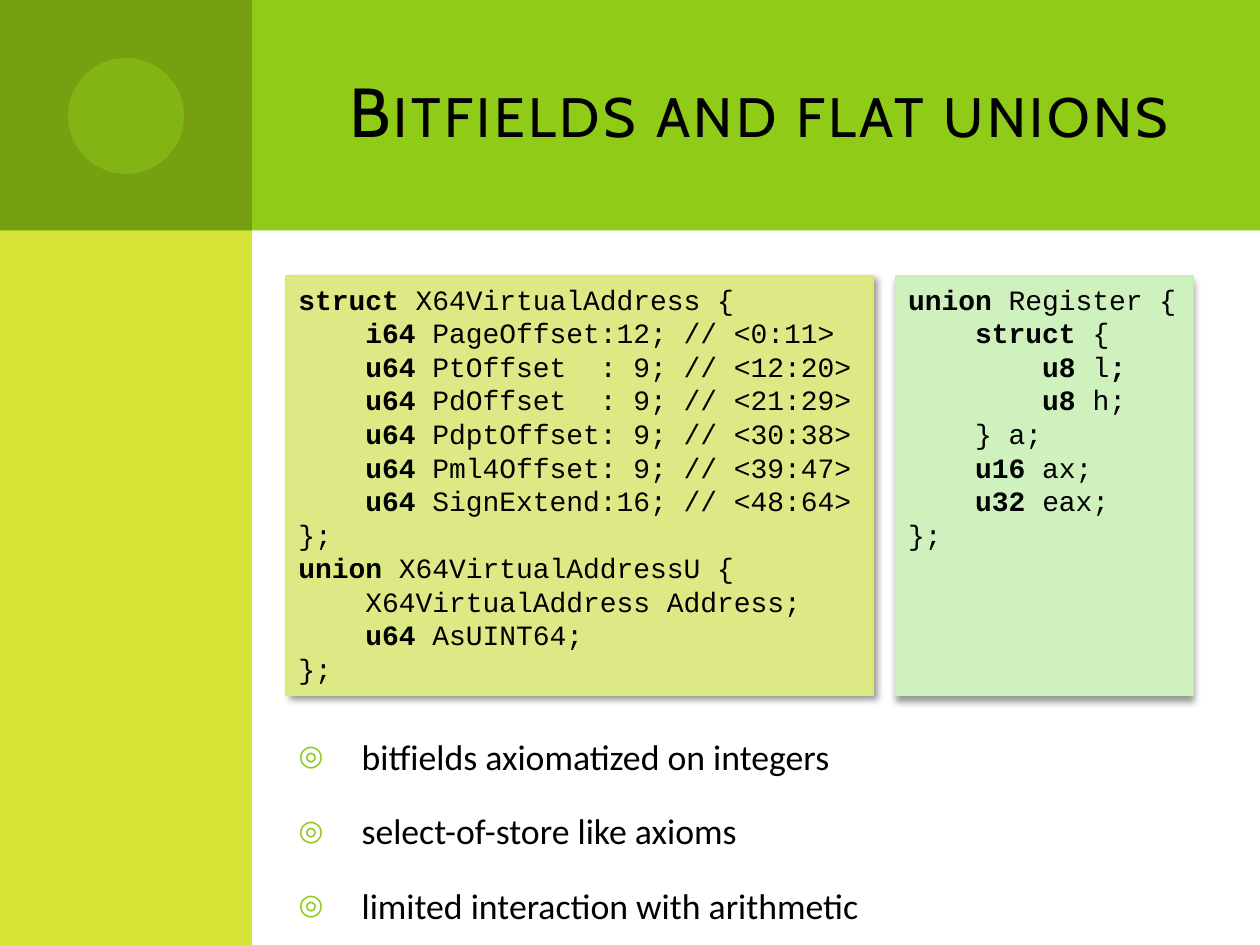
"""Builds a slide on bitfields and flat unions with two code panels and a list."""
from lxml import etree
from pptx import Presentation
from pptx import util as u
from pptx.dml import color
from pptx.enum import shapes, text
from pptx.oxml import ns

COLOURS = {
    "green": "8FCB17", "dark": "769F11", "lime": "D4E336", "ink": "000000",
    "struct": "DDE985", "struct_edge": "DBE964",
    "union": "CFF1BE", "union_edge": "C7F0B2",
}

ADDRESS_CODE = """*struct* X64VirtualAddress {
    *i64 *PageOffset:12; // <0:11>
    *u64 *PtOffset  : 9; // <12:20>
    *u64 *PdOffset  : 9; // <21:29>
    *u64 *PdptOffset: 9; // <30:38>
    *u64 *Pml4Offset: 9; // <39:47>
    *u64 *SignExtend:16; // <48:64>
};
*union* X64VirtualAddressU {
    X64VirtualAddress Address;
    *u64 *AsUINT64;
};"""

REGISTER_CODE = """*union* Register {
*    struct* {
*        u8* l*;*
*        u8 *h;
    } a;
*    u16* ax;
*    u32 *eax;
};"""

POINTS = [
    "bitfields axiomatized on integers",
    "select-of-store like axioms",
    "limited interaction with arithmetic",
]


class Slide:
    """Holds the style and the current slide; areas are percentages of the slide."""

    def __init__(self, deck):
        self.deck = deck
        self.page = deck.slides.add_slide(deck.slide_layouts[1])

    def area(self, left, top, width, height):
        """Turns percentages into lengths."""
        wide, high = self.deck.slide_width, self.deck.slide_height
        return [int(share * side / 100) for share, side in
                ((left, wide), (top, high), (width, wide), (height, high))]

    def rgb(self, name):
        """Looks up a named colour."""
        return color.RGBColor.from_string(COLOURS[name])

    def child(self, parent, tag, **attributes):
        """Appends a drawing element."""
        return etree.SubElement(parent, ns.qn(tag), attributes)

    def span(self, para, words, font, size, bold=False):
        """Adds one formatted run."""
        span = para.add_run()
        span.text = words
        span.font.name, span.font.size, span.font.bold = font, u.Pt(size), bold
        span.font.color.rgb = self.rgb("ink")
        return span

    def block(self, area, fill, kind=shapes.MSO_SHAPE.RECTANGLE, alpha=None):
        """Adds a plain filled shape."""
        box = self.page.shapes.add_shape(kind, *self.area(*area))
        box.shadow.inherit = False
        box.fill.solid()
        box.fill.fore_color.rgb = self.rgb(fill)
        box.line.fill.background()
        if alpha:
            tint = box.fill._xPr.find(".//" + ns.qn("a:srgbClr"))
            self.child(tint, "a:alpha", val=str(alpha * 1000))
        return box

    def code(self, area, style, source, angle, wrap):
        """Adds a shadowed code panel; asterisks switch bold on and off."""
        box = self.block(area, style)
        box.line.color.rgb = self.rgb(style + "_edge")
        box.line.width = u.Pt(0.75)
        effects = box._element.spPr.find(ns.qn("a:effectLst"))
        shadow = self.child(effects, "a:outerShdw", blurRad=str(u.Pt(4)), dist=str(u.Pt(3)),
                            dir=str(angle * 60000), rotWithShape="0")
        tint = self.child(shadow, "a:srgbClr", val=COLOURS["ink"])
        self.child(tint, "a:alpha", val="40000")
        frame = box.text_frame
        frame.word_wrap = wrap
        frame.vertical_anchor = text.MSO_ANCHOR.TOP
        for number, line in enumerate(source.splitlines()):
            para = frame.add_paragraph() if number else frame.paragraphs[0]
            para.alignment = text.PP_ALIGN.LEFT
            for index, words in enumerate(line.split("*")):
                if words:
                    self.span(para, words, "Courier New", 16, bold=index % 2 == 1)

    def placeholder(self, index, area):
        """Moves a template placeholder to an area, in front of the blocks."""
        box = self.page.placeholders[index]
        box.left, box.top, box.width, box.height = self.area(*area)
        self.page.shapes._spTree.append(box._element)
        box.text_frame.auto_size = text.MSO_AUTO_SIZE.NONE
        box.text_frame.word_wrap = True
        return box.text_frame

    def title(self, area, words):
        """Fills the title in spaced small capitals."""
        frame = self.placeholder(0, area)
        frame.vertical_anchor = text.MSO_ANCHOR.MIDDLE
        para = frame.paragraphs[0]
        para.alignment = text.PP_ALIGN.RIGHT
        look = self.span(para, words, "Cabin", 39.6).font._element
        look.set("cap", "small")
        look.set("spc", "200")

    def bullets(self, area, points):
        """Fills the body with a bulleted list."""
        frame = self.placeholder(1, area)
        for number, words in enumerate(points):
            para = frame.add_paragraph() if number else frame.paragraphs[0]
            para.space_before = u.Pt(18)
            layout = para._p.get_or_add_pPr()
            layout.set("marL", str(u.Inches(0.5)))
            layout.set("indent", str(u.Inches(-0.5)))
            tint = self.child(layout, "a:buClr")
            self.child(tint, "a:srgbClr", val=COLOURS["green"])
            self.child(layout, "a:buSzPct", val="80000")
            self.child(layout, "a:buChar", char="◎")
            self.span(para, words, "Calibri", 20.4)


def main():
    """Builds and saves the deck."""
    deck = Presentation()
    deck.slide_width, deck.slide_height = u.Inches(10), u.Inches(7.5)
    slide = Slide(deck)
    band, side = 24.4, 20
    slide.block((5, 0, 95, band), "green")
    slide.block((0, 0, side, 100), "lime")
    slide.block((0, 0, side, band), "dark")
    slide.block((5.4, 6.13, 9.2, 12.27), "green", shapes.MSO_SHAPE.OVAL, alpha=50)
    slide.title((26.7, 3.33, 68.3, 16.67), "Bitfields and flat unions")
    left, top, height = 22.7, 29.2, 44.4
    slide.code((left, top, 46.6, height), "struct", ADDRESS_CODE, 45, False)
    slide.code((71.1, top, 23.6, height), "union", REGISTER_CODE, 90, True)
    slide.bullets((left, 77.07, 75.8, 18.8), POINTS)
    deck.save("out.pptx")


if __name__ == "__main__":
    main()
